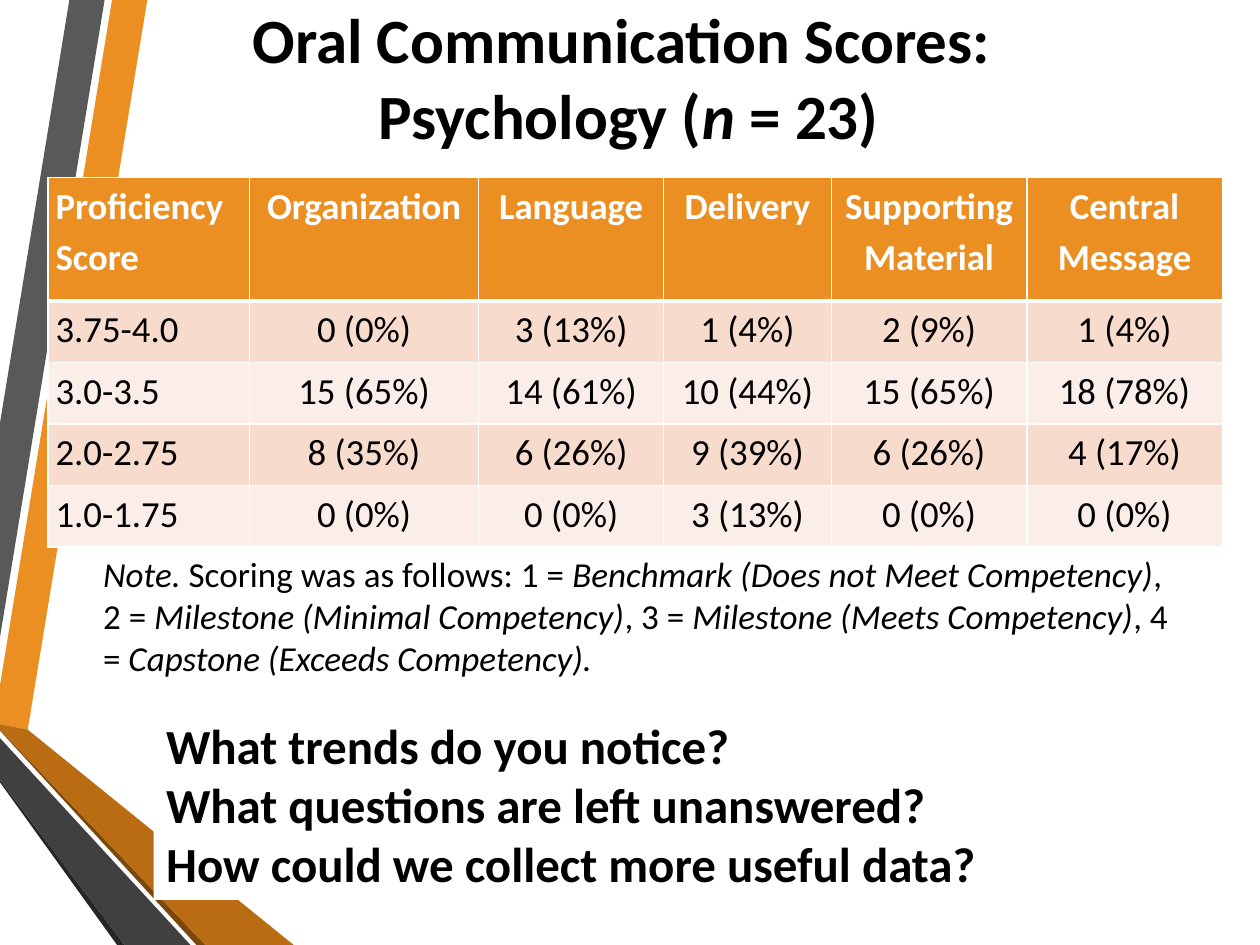
from lxml import etree
from pptx import Presentation
from pptx.dml.color import RGBColor
from pptx.enum.shapes import MSO_SHAPE
from pptx.enum.text import MSO_ANCHOR, MSO_AUTO_SIZE, PP_ALIGN
from pptx.oxml.ns import qn
from pptx.util import Cm, Pt

RECT = MSO_SHAPE.RECTANGLE
LEFT, CENTER = PP_ALIGN.LEFT, PP_ALIGN.CENTER
TOP, MIDDLE = MSO_ANCHOR.TOP, MSO_ANCHOR.MIDDLE
FIT_SHAPE, NO_FIT = MSO_AUTO_SIZE.SHAPE_TO_FIT_TEXT, MSO_AUTO_SIZE.NONE

BLACK, WHITE, ORANGE = "000000", "FFFFFF", "EB8F22"
BANDS = ("F7DBCD", "FBEEE8")

RIBBONS = [
    (ORANGE, [(0, 13.82), (0, 14.6), (0.56, 14.71), (2.97, 0), (2.26, 0)]),
    ("595959", [(2.11, 0), (1.4, 0), (0, 8.53), (0, 12.85)]),
    ("262626", [(0, 15.72), (0, 15.77), (2.36, 19.05), (2.51, 19.05)]),
    ("7B480B", [(0, 14.71), (0, 14.73), (3.96, 19.05), (4.14, 19.05)]),
    ("B96C11", [(0, 14.71), (4.14, 19.05), (5.92, 19.05), (0.56, 14.71), (0, 14.6)]),
    ("404040", [(0, 15.72), (2.51, 19.05), (3.84, 19.05), (0, 14.88)]),
]
COLUMN_WIDTHS = [4.06, 4.62, 3.73, 3.38, 3.94, 3.94]
ROW_HEIGHTS = [2.49] + [1.24] * 4
SCORES = [
    ["Proficiency Score", "Organization", "Language", "Delivery",
     "Supporting Material", "Central Message"],
    ["3.75-4.0", "0 (0%)", "3 (13%)", "1 (4%)", "2 (9%)", "1 (4%)"],
    ["3.0-3.5", "15 (65%)", "14 (61%)", "10 (44%)", "15 (65%)", "18 (78%)"],
    ["2.0-2.75", "8 (35%)", "6 (26%)", "9 (39%)", "6 (26%)", "4 (17%)"],
    ["1.0-1.75", "0 (0%)", "0 (0%)", "3 (13%)", "0 (0%)", "0 (0%)"],
]
TITLE = "Oral Communication Scores: \vPsychology (*n* = 23)"
NOTE = ("*Note. *Scoring was as follows: 1 = *Benchmark (Does not Meet Competency)*, "
        "2 = *Milestone (Minimal Competency)*, 3 = *Milestone (Meets Competency)*, "
        "4 =* Capstone (Exceeds Competency).*")
QUESTIONS = [
    "What trends do you notice?",
    "What questions are left unanswered?",
    "How could we collect more useful data?",
]


def rgb(color):
    return RGBColor.from_string(color)


def apply(target, values):
    for name, value in values.items():
        setattr(target, name, value)


class SlideBuilder:
    def __init__(self, slide, font):
        self.s = slide
        self.font = font

    def fill_text(self, tf, paragraphs, size, color=BLACK, bold=False, **para_format):
        """Fill a text frame; text between asterisks is italic."""
        for i, text in enumerate(paragraphs):
            p = tf.add_paragraph() if i else tf.paragraphs[0]
            apply(p, para_format)
            for j, part in enumerate(text.split("*")):
                for k, line in enumerate(part.split("\v")):
                    if k:
                        p.add_line_break()
                    if line:
                        r = p.add_run()
                        r.text = line
                        apply(r.font, {"name": self.font, "size": Pt(size),
                                       "bold": bold, "italic": j % 2 == 1})
                        r.font.color.rgb = rgb(color)

    def paint(self, sp, color):
        sp.shadow.inherit = False
        sp.fill.solid()
        sp.fill.fore_color.rgb = rgb(color)
        sp.line.fill.background()

    def polygon(self, color, points):
        start, *rest = [(Cm(x), Cm(y)) for x, y in points]
        builder = self.s.shapes.build_freeform(*start)
        builder.add_line_segments(rest, close=True)
        self.paint(builder.convert_to_shape(), color)

    def text(self, box, paragraphs, size, fill=None, anchor=TOP,
             auto_size=FIT_SHAPE, align=LEFT, bold=False):
        box = [Cm(v) for v in box]
        if fill:
            sp = self.s.shapes.add_shape(RECT, *box)
            self.paint(sp, fill)
        else:
            sp = self.s.shapes.add_textbox(*box)
        tf = sp.text_frame
        apply(tf, {"word_wrap": True, "auto_size": auto_size, "vertical_anchor": anchor})
        self.fill_text(tf, paragraphs, size, bold=bold, alignment=align)

    def borders(self, cell, widths, color=WHITE):
        """Set cell borders from a dict of side letter to points."""
        tc_pr = cell._tc.get_or_add_tcPr()
        for i, side in enumerate("LRTB"):
            ln = etree.Element(qn(f"a:ln{side}"), w=str(Pt(widths[side])))
            fill = etree.SubElement(ln, qn("a:solidFill"))
            etree.SubElement(fill, qn("a:srgbClr"), val=color)
            tc_pr.insert(i, ln)

    def table(self, left, top, widths, heights, rows, size):
        frame = self.s.shapes.add_table(len(rows), len(widths), Cm(left), Cm(top),
                                        Cm(sum(widths)), Cm(sum(heights)))
        tbl = frame.table
        for column, width in zip(tbl.columns, widths):
            column.width = Cm(width)
        for i, (row, height) in enumerate(zip(rows, heights)):
            tbl.rows[i].height = Cm(height)
            header = i == 0
            for j, text in enumerate(row):
                cell = tbl.cell(i, j)
                apply(cell, {"margin_left": Cm(0.15), "margin_right": Cm(0.15),
                             "margin_top": 0, "margin_bottom": 0})
                cell.fill.solid()
                cell.fill.fore_color.rgb = rgb(ORANGE if header else BANDS[(i - 1) % 2])
                self.borders(cell, {"L": 1, "R": 1, "T": 3 if i == 1 else 1,
                                    "B": 3 if header else 1})
                self.fill_text(cell.text_frame, [text], size,
                               color=WHITE if header else BLACK, bold=header,
                               alignment=CENTER if j else LEFT, line_spacing=1.15)


def main():
    prs = Presentation()
    prs.slide_width, prs.slide_height = Cm(25.4), Cm(19.05)
    s = SlideBuilder(prs.slides.add_slide(prs.slide_layouts[6]), "Calibri")

    for color, points in RIBBONS:
        s.polygon(color, points)
    s.text((2.39, 0.13, 20.57, 2.82), [TITLE], 36, anchor=MIDDLE,
           auto_size=NO_FIT, align=CENTER, bold=True)
    s.table(0.97, 3.58, COLUMN_WIDTHS, ROW_HEIGHTS, SCORES, 21)
    s.text((1.83, 11.02, 22.28, 3.58), [NOTE], 20)
    s.text((3.1, 14.3, 19.74, 3.84), QUESTIONS, 28, fill=WHITE, bold=True)

    prs.save("out.pptx")


if __name__ == "__main__":
    main()
